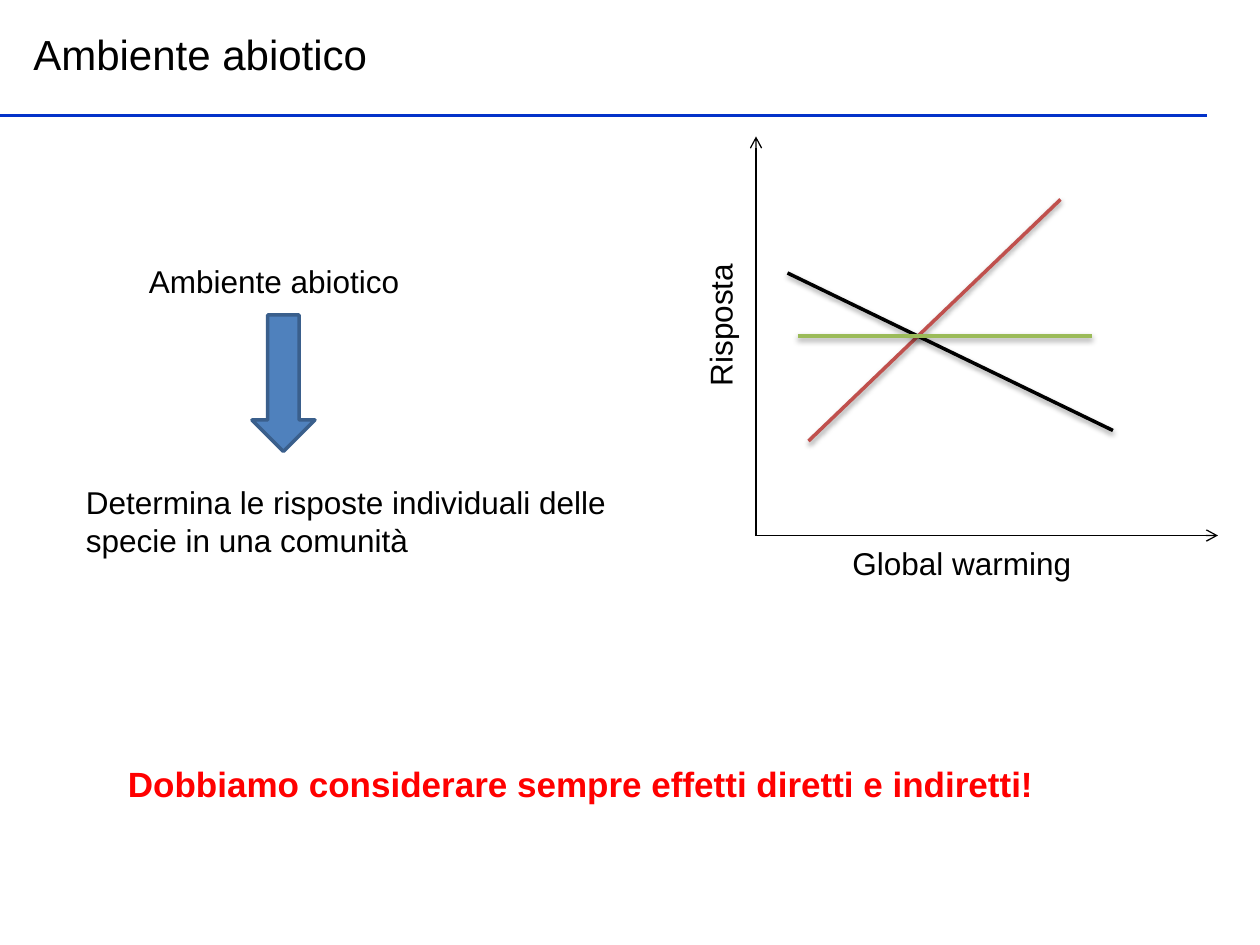
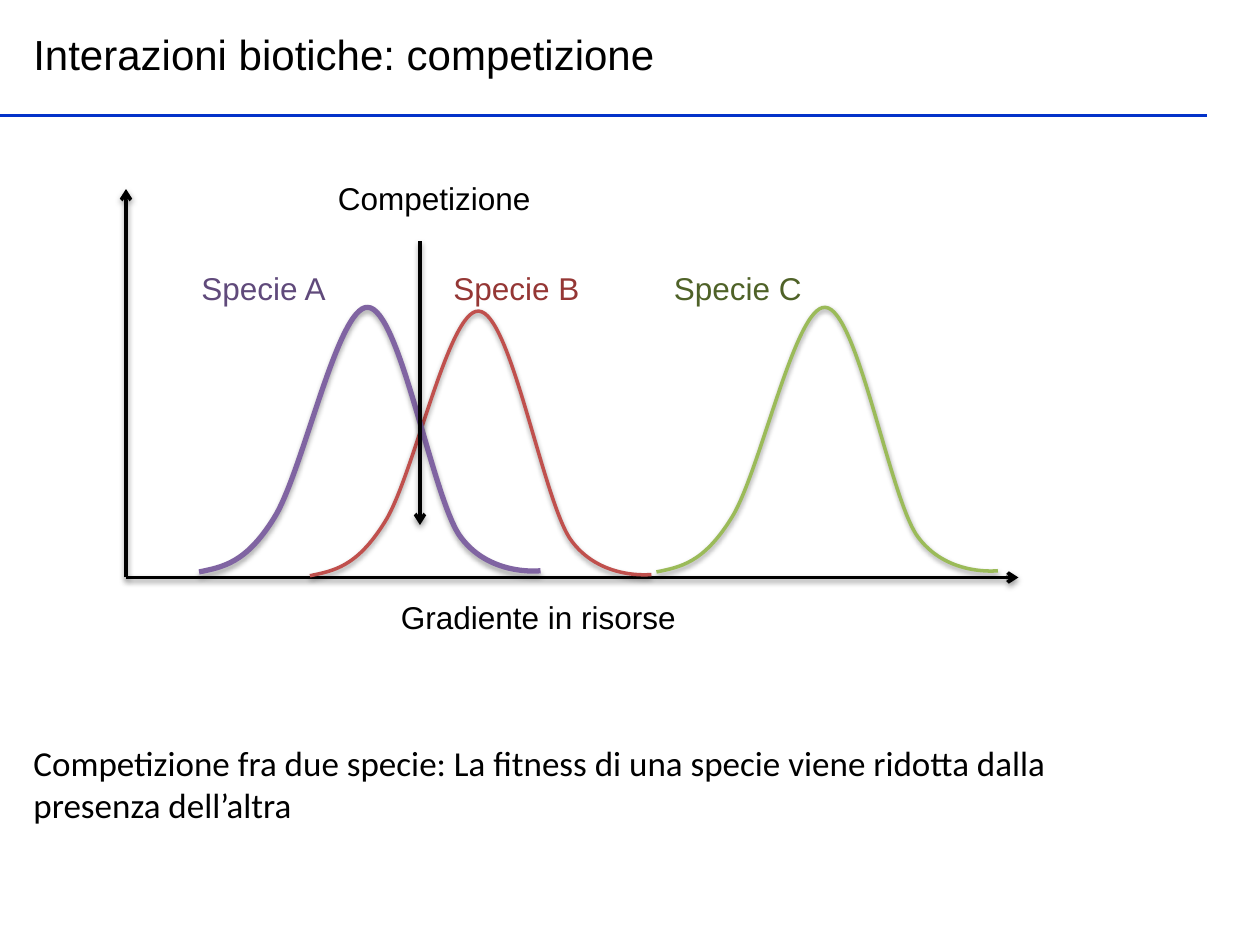
from lxml import etree
from pptx import Presentation
from pptx import util as u
from pptx.dml.color import RGBColor
from pptx.enum import shapes, text
from pptx.oxml import parse_xml
from pptx.oxml.ns import qn

BLACK, RED, GREEN, PURPLE = "000000", "C0504D", "9BBB59", "8064A2"
NS = 'xmlns:a="http://schemas.openxmlformats.org/drawingml/2006/main"'
SHADOW = ('<a:effectLst {}><a:outerShdw blurRad="40000" dist="{}" dir="5400000" rotWithShape="0">'
          '<a:srgbClr val="000000"><a:alpha val="{}"/></a:srgbClr></a:outerShdw></a:effectLst>')
SOFT, SOFTER = SHADOW.format(NS, 20000, 38000), SHADOW.format(NS, 23000, 35000)
NO_SHADOW = f"<a:effectLst {NS}/>"
TOP, MIDDLE = text.MSO_ANCHOR.TOP, text.MSO_ANCHOR.MIDDLE
STRAIGHT = shapes.MSO_CONNECTOR.STRAIGHT
GRID = 12


def add_text(s, words, x, y, w, h=0.4, size=18, color=BLACK, font="Arial", bold=False,
             align=text.PP_ALIGN.LEFT, anchor=MIDDLE, rotation=0, grow=True):
    sp = s.shapes.add_textbox(u.Inches(x), u.Inches(y), u.Inches(w), u.Inches(h))
    sp.rotation = rotation
    tf = sp.text_frame
    tf.word_wrap = True
    tf.vertical_anchor = anchor
    if grow:
        tf.auto_size = text.MSO_AUTO_SIZE.SHAPE_TO_FIT_TEXT
    p = tf.paragraphs[0]
    p.alignment = align
    r = p.add_run()
    r.text = words
    r.font.name, r.font.size, r.font.bold = font, u.Pt(size), bold
    r.font.color.rgb = RGBColor.from_string(color)


def style_line(sp, color, width=2, effect=SOFT, arrow=False):
    sp.line.color.rgb = RGBColor.from_string(color)
    sp.line.width = u.Pt(width)
    if arrow:
        etree.SubElement(sp.line._get_or_add_ln(), qn("a:tailEnd"), type="arrow")
    sp._element.spPr.append(parse_xml(effect))


prs = Presentation()
prs.slide_width, prs.slide_height = u.Inches(10), u.Inches(7.5)
slides = [prs.slides.add_slide(prs.slide_layouts[6]) for _ in range(2)]
abiotic, competition = slides

rule = dict(color="0332C9", effect=NO_SHADOW)
axis = dict(color=BLACK, width=0.75, effect=NO_SHADOW, arrow=True)
strong_axis = dict(color=BLACK, arrow=True)
for s, ends, look in (
    (abiotic, (0, 11, 115, 11), rule),
    (competition, (0, 11, 115, 11), rule),
    (abiotic, (72, 51, 72, 13), axis),
    (abiotic, (72, 51, 116, 51), axis),
    (abiotic, (77, 42, 101, 19), dict(color=RED)),
    (abiotic, (75, 26, 106, 41), dict(color=BLACK)),
    (abiotic, (76, 32, 104, 32), dict(color=GREEN)),
    (competition, (12, 55, 97, 55), strong_axis),
    (competition, (12, 55, 12, 18), strong_axis),
):
    sp = s.shapes.add_connector(STRAIGHT, *[u.Inches(v / GRID) for v in ends])
    style_line(sp, **look)

for s, title in zip(slides, ("Ambiente abiotico", "Interazioni biotiche: competizione")):
    add_text(s, title, 2 / GRID, 0.18, 8.5, 0.5, size=24)

add_text(abiotic, "Ambiente abiotico", 13 / GRID, 2.03, 4.58, 0.71, anchor=TOP, grow=False)
add_text(abiotic, "Determina le risposte individuali delle specie in una comunità",
         7 / GRID, 3.78, 4.58, 0.71)
add_text(abiotic, "Global warming", 80 / GRID, 4.27, 2.83)
add_text(abiotic, "Risposta", 4.3, 2.38, 2.83, align=text.PP_ALIGN.CENTER, rotation=270)
add_text(abiotic, "Dobbiamo considerare sempre effetti diretti e indiretti!", 11 / GRID, 6, 8.25, 0.44,
         size=20, color="FF0000", bold=True)

down = abiotic.shapes.add_shape(shapes.MSO_SHAPE.DOWN_ARROW, u.Inches(2), u.Inches(2.5),
                                u.Inches(0.5), u.Inches(13 / GRID))
down.fill.solid()
down.fill.fore_color.rgb = RGBColor.from_string("4F81BD")
style_line(down, "3A5F8C", effect=NO_SHADOW)

BELL_W, BELL_H = u.Inches(2.71), u.Inches(2.17)
bell = [(0, 2.12), (0.19, 2.08), (0.37, 2.05), (0.59, 1.7), (0.82, 1.35), (1.1, 0), (1.34, 0.02),
        (1.59, 0.03), (1.84, 1.47), (2.06, 1.82), (2.29, 2.16), (2.71, 2.11), (2.71, 2.11)]

for name, x, y, color, width, effect, label_x, label_w, label_color in (
    ("Specie B", 2.46, 2.45, RED, 2, SOFT, 42, 1.33, "953735"),
    ("Specie C", 5.21, 2.42, GREEN, 2, SOFT, 63, 1.5, "4F6228"),
    ("Specie A", 1.58, 2.42, PURPLE, 3, SOFTER, 18, 1.33, "604A7B"),
):
    left, top = u.Inches(x), u.Inches(y)
    fb = competition.shapes.build_freeform(left, top)
    fb.add_line_segments([(left + BELL_W, top + BELL_H)], close=False)
    sp = fb.convert_to_shape()
    curve = sp._element.spPr.find(".//" + qn("a:path"))
    for child in list(curve):
        curve.remove(child)
    for tag, pts in [("a:moveTo", bell[:1])] + [("a:cubicBezTo", bell[i:i + 3]) for i in (1, 4, 7, 10)]:
        step = etree.SubElement(curve, qn(tag))
        for dx, dy in pts:
            etree.SubElement(step, qn("a:pt"), x=str(int(u.Inches(dx))), y=str(int(u.Inches(dy))))
    sp.fill.background()
    style_line(sp, color, width, effect)
    add_text(competition, name, label_x / GRID, 25 / GRID, label_w, color=label_color)

overlap = competition.shapes.add_connector(STRAIGHT, *[u.Inches(v / GRID) for v in (40, 23, 40, 50)])
style_line(overlap, **strong_axis)
add_text(competition, "Competizione", 31 / GRID, 1.37, 2.25)
add_text(competition, "Gradiente in risorse", 37 / GRID, 4.7, 3)
add_text(competition, "Competizione fra due specie: La fitness di una specie viene ridotta dalla presenza dell’altra",
         2 / GRID, 70 / GRID, 8.92, 0.77, size=20, font="Calibri", anchor=TOP)

prs.save("out.pptx")
